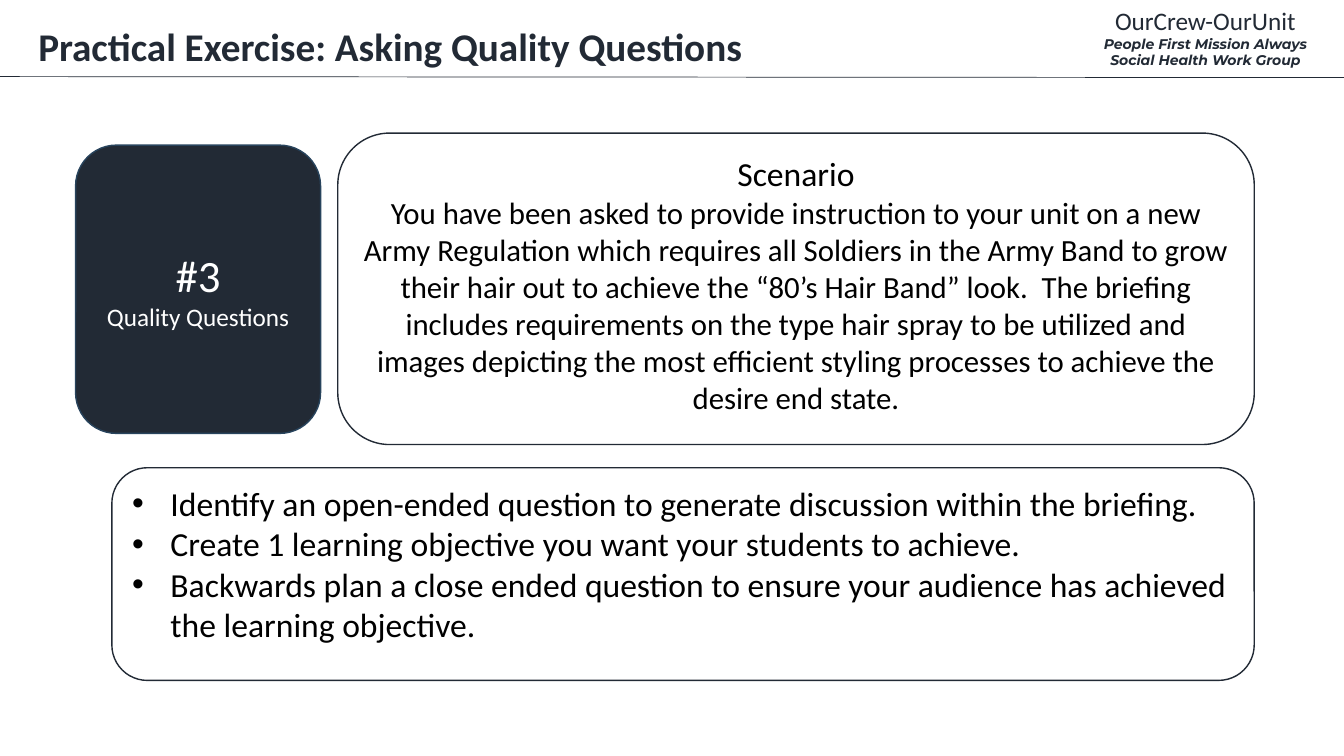
from dataclasses import dataclass
from typing import Optional

import lxml.etree
import pptx
import pptx.dml.color
import pptx.enum.shapes
import pptx.enum.text
import pptx.oxml.ns
import pptx.util

Inches = pptx.util.Inches
Align = pptx.enum.text.PP_ALIGN
Anchor = pptx.enum.text.MSO_ANCHOR


@dataclass(frozen=True)
class Theme:
    navy: str = "222A35"
    steel: str = "28445D"
    white: str = "FFFFFF"
    black: str = "000000"
    body_font: str = "Calibri"
    motto_font: str = "Montserrat"
    title: int = 28
    team: int = 18
    motto: int = 10
    number: int = 32
    label: int = 18
    body: int = 24
    scenario: int = 22
    border: float = 1
    rule: float = 0.5


THEME = Theme()


@dataclass(frozen=True)
class Line:
    text: str
    size: int
    bullet: bool = False
    font: str = THEME.body_font
    bold: bool = False
    italic: bool = False


@dataclass(frozen=True)
class Card:
    left: float
    top: float
    width: float
    height: float
    lines: tuple[Line, ...]
    border: str = THEME.navy
    fill: Optional[str] = None
    color: str = THEME.black
    anchor: Anchor = Anchor.TOP


CARDS = (
    Card(0.75, 1.44, 2.43, 2.86,
         (Line("#3", THEME.number), Line("Quality Questions", THEME.label)),
         THEME.steel, THEME.navy, THEME.white, Anchor.MIDDLE),
    Card(3.35, 1.32, 9.09, 3.09, (
        Line("Scenario", THEME.body),
        Line("You have been asked to provide instruction to your unit on a new "
             "Army Regulation which requires all Soldiers in the Army Band to grow "
             "their hair out to achieve the “80’s Hair Band” look.  The briefing "
             "includes requirements on the type hair spray to be utilized and "
             "images depicting the most efficient styling processes to achieve the "
             "desire end state.", THEME.scenario))),
    Card(1.11, 4.64, 11.33, 2.11, (
        Line("Identify an open-ended question to generate discussion within the briefing.",
             THEME.body, True),
        Line("Create 1 learning objective you want your students to achieve.",
             THEME.body, True),
        Line("Backwards plan a close ended question to ensure your audience has "
             "achieved the learning objective.", THEME.body, True))),
)

TITLE = Line("Practical Exercise: Asking Quality Questions", THEME.title, bold=True)

TEAM = (
    Line("OurCrew-OurUnit", THEME.team),
    Line("People First Mission Always", THEME.motto,
         font=THEME.motto_font, bold=True, italic=True),
    Line("Social Health Work Group", THEME.motto,
         font=THEME.motto_font, bold=True, italic=True),
)


def rgb(code: str) -> pptx.dml.color.RGBColor:
    return pptx.dml.color.RGBColor.from_string(code)


def place(shape, left: float, top: float, width: float, height: float) -> None:
    shape.left, shape.top = Inches(left), Inches(top)
    shape.width, shape.height = Inches(width), Inches(height)


def add_bullet(paragraph) -> None:
    properties = paragraph._p.get_or_add_pPr()
    properties.set("marL", str(Inches(0.38)))
    properties.set("indent", str(-Inches(0.38)))
    for tag, attribute, value in (("a:buFont", "typeface", "Arial"),
                                  ("a:buChar", "char", "•")):
        lxml.etree.SubElement(properties, pptx.oxml.ns.qn(tag)).set(attribute, value)


def write(frame, lines: tuple[Line, ...], color: str,
          align: Align = Align.CENTER) -> None:
    frame.word_wrap = True
    for index, line in enumerate(lines):
        paragraph = frame.paragraphs[0] if index == 0 else frame.add_paragraph()
        paragraph.text = line.text
        paragraph.alignment = Align.LEFT if line.bullet else align
        paragraph.line_spacing = 1.0
        paragraph.space_before = pptx.util.Pt(0)
        paragraph.font.name = line.font
        paragraph.font.size = pptx.util.Pt(line.size)
        paragraph.font.bold = line.bold
        paragraph.font.italic = line.italic
        paragraph.font.color.rgb = rgb(color)
        if line.bullet:
            add_bullet(paragraph)


def draw_card(slide, card: Card) -> None:
    box = slide.shapes.add_shape(
        pptx.enum.shapes.MSO_SHAPE.ROUNDED_RECTANGLE, Inches(card.left),
        Inches(card.top), Inches(card.width), Inches(card.height))
    box.shadow.inherit = False
    if card.fill:
        box.fill.solid()
        box.fill.fore_color.rgb = rgb(card.fill)
    else:
        box.fill.background()
    box.line.color.rgb = rgb(card.border)
    box.line.width = pptx.util.Pt(THEME.border)
    box.text_frame.vertical_anchor = card.anchor
    write(box.text_frame, card.lines, card.color)


def draw_header(slide, width: float) -> None:
    team = slide.shapes.add_textbox(
        Inches(10.58), Inches(0), Inches(2.75), Inches(0.74))
    write(team.text_frame, TEAM, THEME.navy)

    title = slide.shapes.title
    place(title, 0.28, 0.17, 10.68, 0.57)
    title.text_frame.vertical_anchor = Anchor.TOP
    title.text_frame.auto_size = pptx.enum.text.MSO_AUTO_SIZE.NONE
    write(title.text_frame, (TITLE,), THEME.navy, Align.LEFT)

    rule = slide.shapes.add_connector(
        pptx.enum.shapes.MSO_CONNECTOR.STRAIGHT,
        Inches(0), Inches(0.76), Inches(width), Inches(0.77))
    rule.line.color.rgb = rgb(THEME.navy)
    rule.line.width = pptx.util.Pt(THEME.rule)
    lxml.etree.SubElement(rule._element.spPr, pptx.oxml.ns.qn("a:effectLst"))


def main() -> None:
    width, height = 13.33, 7.5
    deck = pptx.Presentation()
    deck.slide_width, deck.slide_height = Inches(width), Inches(height)
    slide = deck.slides.add_slide(deck.slide_layouts.get_by_name("Title Only"))
    draw_header(slide, width)
    for card in CARDS:
        draw_card(slide, card)
    deck.save("out.pptx")


if __name__ == "__main__":
    main()
